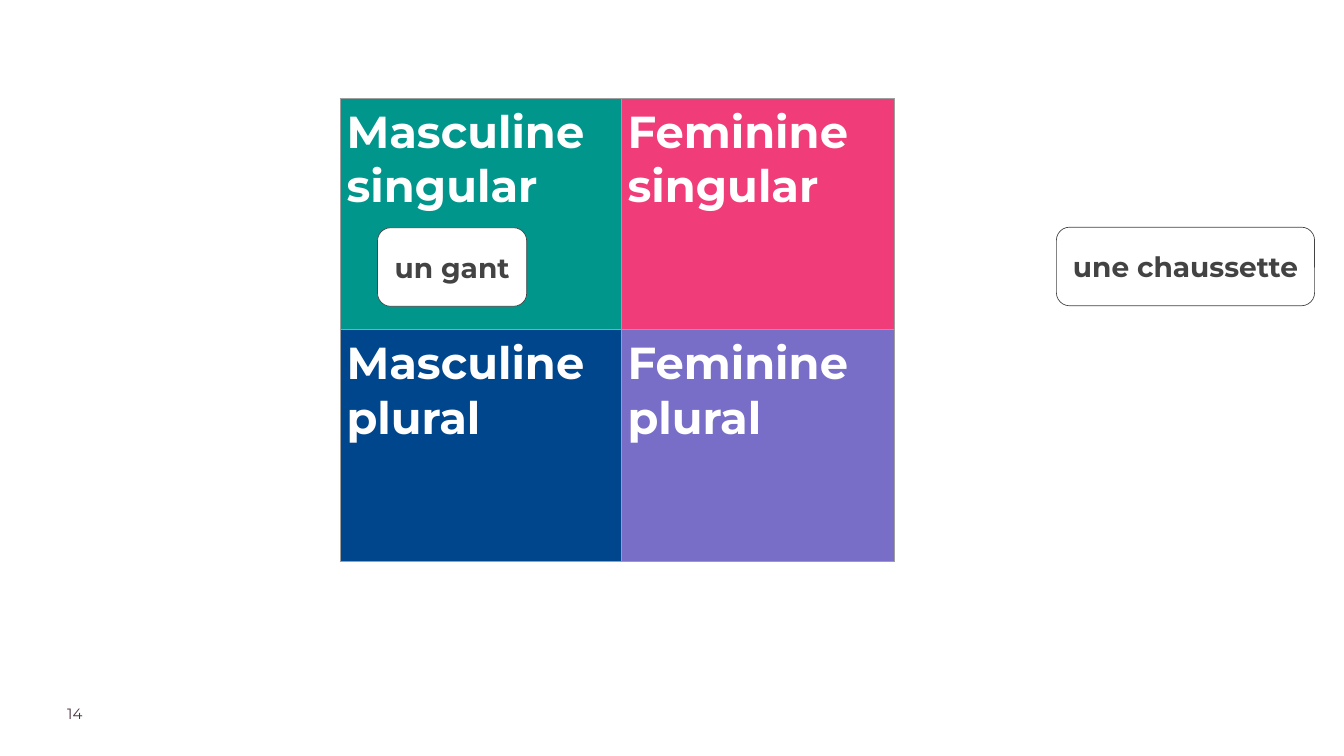
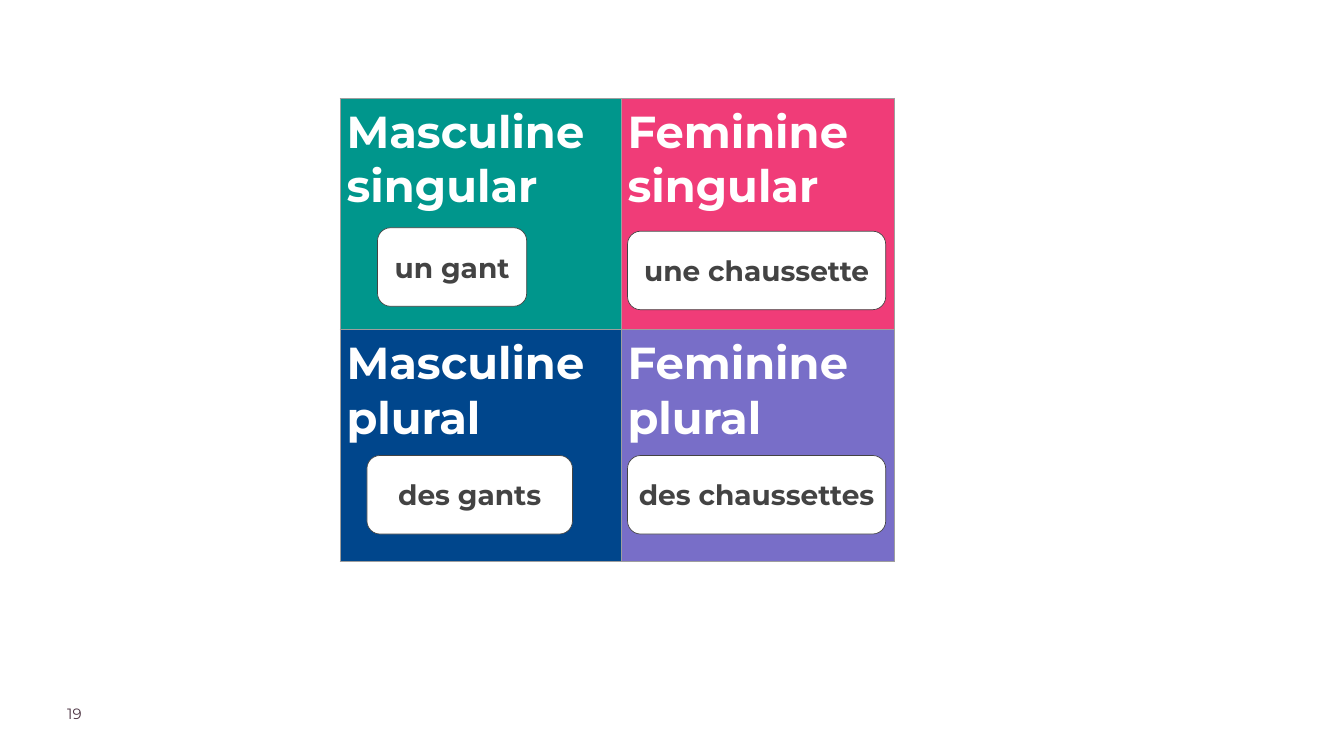
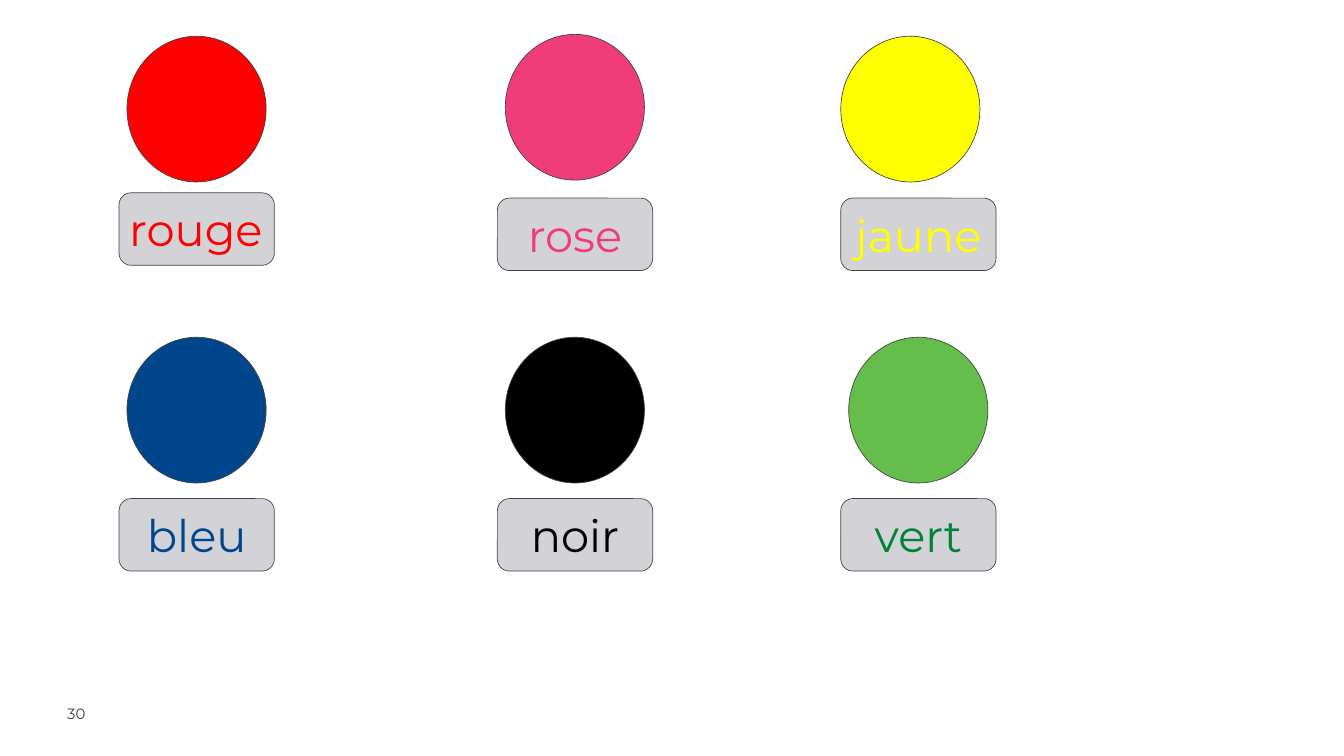
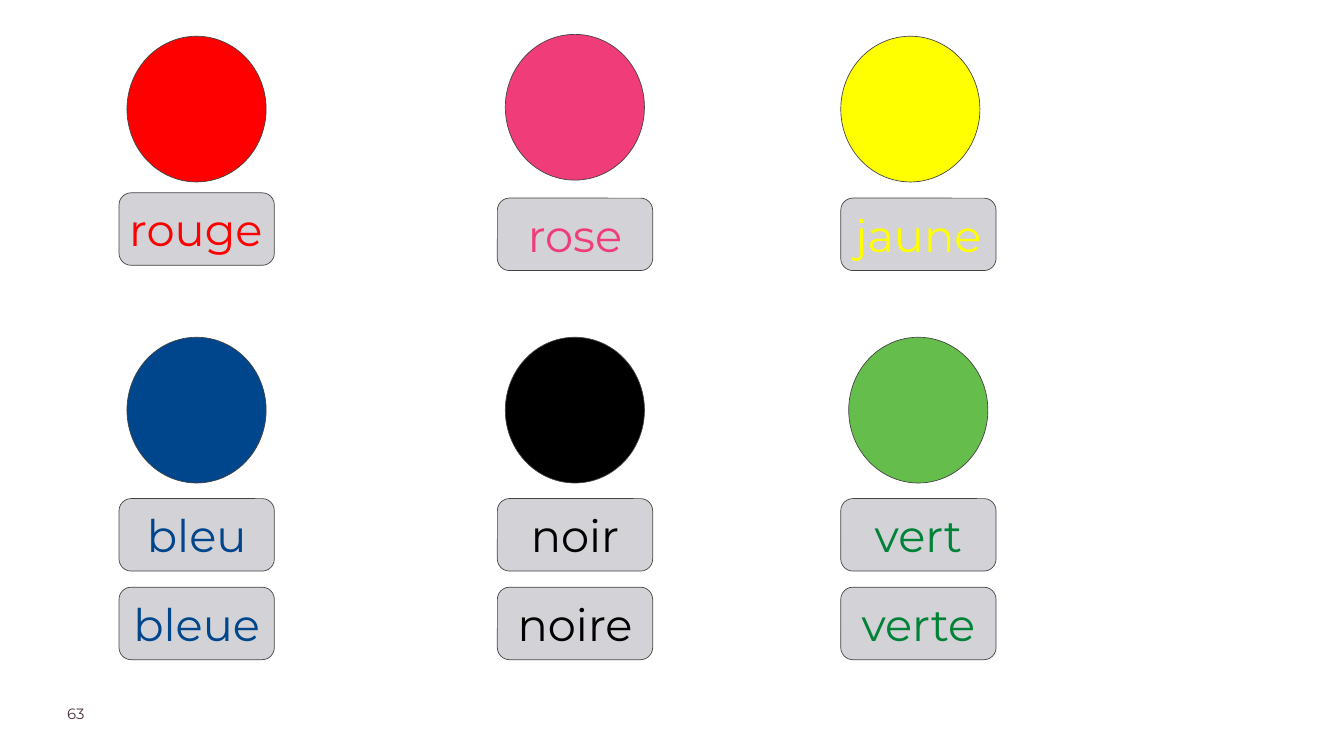
from dataclasses import dataclass

from lxml import etree
from pptx import Presentation
from pptx.dml.color import RGBColor
from pptx.enum.shapes import MSO_SHAPE
from pptx.enum.text import MSO_ANCHOR, PP_ALIGN
from pptx.oxml.ns import qn
from pptx.util import Cm, Pt

LEFT, CENTER = PP_ALIGN.LEFT, PP_ALIGN.CENTER
MIDDLE = MSO_ANCHOR.MIDDLE
ROUNDED, OVAL = MSO_SHAPE.ROUNDED_RECTANGLE, MSO_SHAPE.OVAL
BLANK_LAYOUT = 6


@dataclass(frozen=True)
class Theme:
    font: str = "Montserrat"
    white: str = "FFFFFF"
    outline: str = "434343"
    grid: str = "9E9E9E"
    label: str = "D2D2D7"
    page: str = "4B3241"
    teal: str = "00968C"
    red: str = "FF0000"
    pink: str = "F03C78"
    yellow: str = "FFFF00"
    blue: str = "00468C"
    black: str = "000000"
    light_green: str = "65BE4B"
    green: str = "008237"
    purple: str = "786EC8"
    heading_size: int = 48
    card_size: int = 30
    page_size: int = 16
    line_width: float = 0.75
    inset: float = 0.25


THEME = Theme()

# Gender and number grid: heading lines and fill, row by row
GENDER_GRID = [
    [("Masculine\nsingular", THEME.teal), ("Feminine\nsingular", THEME.pink)],
    [("Masculine\nplural", THEME.blue), ("Feminine\nplural", THEME.purple)],
]
GRID_COLUMNS = (10.62, 10.34)
GRID_ROW = 8.75

# Word cards: text, left, top, width
UN_GANT = ("un gant", 14.27, 8.61, 5.64)
FIRST_CARDS = [("une chaussette", 39.93, 8.59, 9.76), UN_GANT]
ALL_CARDS = [
    ("une chaussette", 23.72, 8.74, 9.76),
    UN_GANT,
    ("des gants", 13.87, 17.22, 7.77),
    ("des chaussettes", 23.72, 17.22, 9.76),
]

# Colour names: word, disc colour, word colour, disc shift and top, label top, alignment
COLUMNS = (4.5, 18.8, 31.78)
DISC_SHIFT = 0.3
COLOUR_ROWS = [
    [("rouge", THEME.red, THEME.red, DISC_SHIFT, 1.37, 7.29, LEFT),
     ("rose", THEME.pink, THEME.pink, DISC_SHIFT, 1.3, 7.49, CENTER),
     ("jaune", THEME.yellow, THEME.yellow, 0, 1.37, 7.49, CENTER)],
    [(word, disc, ink, DISC_SHIFT, 12.75, 18.85, CENTER) for word, disc, ink in (
        ("bleu", THEME.blue, THEME.blue),
        ("noir", THEME.black, THEME.black),
        ("vert", THEME.light_green, THEME.green))],
]
FEMININE_TOP = 22.2


class Deck:
    """Holds the theme and the current slide."""

    def __init__(self, theme):
        self.theme = theme
        self.prs = Presentation()
        self.prs.slide_width, self.prs.slide_height = Cm(50.8), Cm(28.58)
        self.slide = None

    def new_slide(self, number):
        self.slide = self.prs.slides.add_slide(self.prs.slide_layouts[BLANK_LAYOUT])
        box = self.slide.shapes.add_textbox(Cm(2.54), Cm(26.62), Cm(4), Cm(1))
        self.set_text(box.text_frame, str(number), self.theme.page_size, self.theme.page, inset=0)

    def set_text(self, frame, text, size, color, bold=False, align=LEFT, inset=THEME.inset):
        frame.word_wrap = True
        frame.margin_left = frame.margin_right = Cm(inset)
        frame.margin_top = frame.margin_bottom = Cm(inset)
        frame.text = text
        for paragraph in frame.paragraphs:
            paragraph.alignment = align
            self.style(paragraph, size, color, bold)

    def style(self, paragraph, size, color, bold):
        font = paragraph.font
        font.name, font.size, font.bold = self.theme.font, Pt(size), bold
        font.color.rgb = RGBColor.from_string(color)

    def shape(self, kind, left, top, width, height, fill):
        shape = self.slide.shapes.add_shape(kind, Cm(left), Cm(top), Cm(width), Cm(height))
        shape.shadow.inherit = False
        shape.fill.solid()
        shape.fill.fore_color.rgb = RGBColor.from_string(fill)
        shape.line.color.rgb = RGBColor.from_string(self.theme.outline)
        shape.line.width = Pt(self.theme.line_width)
        return shape

    def disc(self, left, top, fill):
        self.shape(OVAL, left, top, 5.26, 5.51, fill)

    def card(self, text, left, top, width):
        card = self.shape(ROUNDED, left, top, width, 2.97, self.theme.white)
        card.text_frame.vertical_anchor = MIDDLE
        self.set_text(card.text_frame, text, self.theme.card_size, self.theme.outline, True, CENTER)

    def label(self, word, left, top, color, align=CENTER):
        label = self.shape(ROUNDED, left, top, 5.87, 2.74, self.theme.label)
        label.text_frame.vertical_anchor = MIDDLE
        self.set_text(label.text_frame, word, self.theme.heading_size, color, align=align)

    def borders(self, cell):
        properties = cell._tc.get_or_add_tcPr()
        for side in ("a:lnL", "a:lnR", "a:lnT", "a:lnB"):
            line = etree.SubElement(properties, qn(side), w=str(Pt(self.theme.line_width)))
            fill = etree.SubElement(line, qn("a:solidFill"))
            etree.SubElement(fill, qn("a:srgbClr"), val=self.theme.grid)

    def grid(self, rows, left, top, column_widths, row_height):
        table = self.slide.shapes.add_table(
            len(rows), len(column_widths), Cm(left), Cm(top),
            Cm(sum(column_widths)), Cm(row_height * len(rows))).table
        table.first_row = table.horz_banding = False
        for column, width in zip(table.columns, column_widths):
            column.width = Cm(width)
        for r, row in enumerate(rows):
            table.rows[r].height = Cm(row_height)
            for c, (heading, fill) in enumerate(row):
                cell = table.cell(r, c)
                self.borders(cell)
                cell.fill.solid()
                cell.fill.fore_color.rgb = RGBColor.from_string(fill)
                cell.margin_left = cell.margin_right = Cm(self.theme.inset)
                cell.margin_top = cell.margin_bottom = Cm(self.theme.inset)
                cell.text_frame.text = heading
                for paragraph in cell.text_frame.paragraphs:
                    self.style(paragraph, self.theme.heading_size, self.theme.white, True)


def gender_slide(deck, number, cards):
    deck.new_slide(number)
    deck.grid(GENDER_GRID, 12.85, 3.71, GRID_COLUMNS, GRID_ROW)
    for card in cards:
        deck.card(*card)


def colour_slide(deck, number, with_feminine=False):
    deck.new_slide(number)
    for row in COLOUR_ROWS:
        for left, (word, disc, ink, shift, disc_top, label_top, align) in zip(COLUMNS, row):
            deck.disc(left + shift, disc_top, disc)
            deck.label(word, left, label_top, ink, align)
    # Feminine forms add an e under the second row
    if with_feminine:
        for left, (word, _, ink, *_) in zip(COLUMNS, COLOUR_ROWS[-1]):
            deck.label(word + "e", left, FEMININE_TOP, ink)


def main():
    deck = Deck(THEME)
    # Gender and number
    gender_slide(deck, 14, FIRST_CARDS)
    gender_slide(deck, 19, ALL_CARDS)
    # Colours
    colour_slide(deck, 30)
    colour_slide(deck, 63, with_feminine=True)
    deck.prs.save("out.pptx")


if __name__ == "__main__":
    main()
